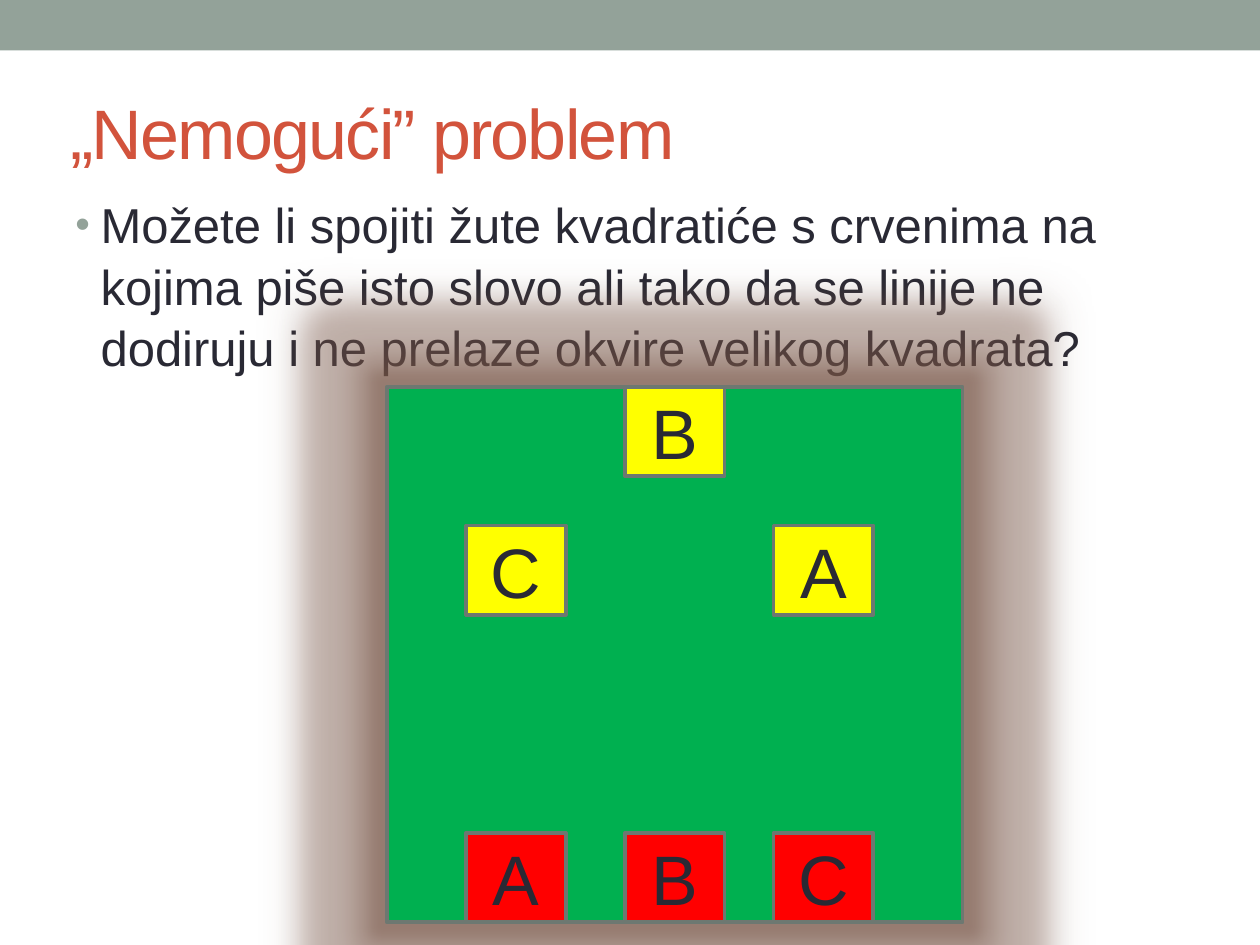
from dataclasses import dataclass

from lxml import etree
from pptx import Presentation
from pptx.dml.color import RGBColor
from pptx.enum.shapes import MSO_SHAPE
from pptx.enum.text import MSO_ANCHOR, PP_ALIGN
from pptx.oxml import parse_xml
from pptx.oxml.ns import nsdecls, qn
from pptx.util import Inches, Pt

RECTANGLE = MSO_SHAPE.RECTANGLE
MIDDLE = MSO_ANCHOR.MIDDLE
CENTER = PP_ALIGN.CENTER


@dataclass(frozen=True)
class Theme:
    font: str = "Arial"
    band: str = "93A299"
    title: str = "D2533C"
    ink: str = "292934"
    board: str = "00B050"
    border: str = "6D7871"
    red: str = "FF0000"
    yellow: str = "FFFF00"
    glow: str = "765344"
    large: int = 40
    body: int = 28
    border_width: float = 2.08


theme = Theme()


def add_box(left, top, width, height, fill, border=None):
    box = slide.shapes.add_shape(
        RECTANGLE, Inches(left), Inches(top), Inches(width), Inches(height))
    box.shadow.inherit = False
    box.fill.solid()
    box.fill.fore_color.rgb = RGBColor.from_string(fill)
    if border:
        box.line.color.rgb = RGBColor.from_string(border)
        box.line.width = Pt(theme.border_width)
    else:
        box.line.fill.background()
    return box


def write(shape, text, size, color):
    shape.text_frame.word_wrap = True
    paragraph = shape.text_frame.paragraphs[0]
    paragraph.text = text
    font = paragraph.runs[0].font
    font.name = theme.font
    font.size = Pt(size)
    font.color.rgb = RGBColor.from_string(color)
    return paragraph


deck = Presentation()
deck.slide_width = Inches(10)
deck.slide_height = Inches(7.5)
slide = deck.slides.add_slide(deck.slide_layouts[6])

add_box(0, 0, 10, 0.4, theme.band)

title = slide.shapes.add_textbox(Inches(0.46), Inches(0.52), Inches(9), Inches(1.04))
title.text_frame.vertical_anchor = MIDDLE
heading = write(title, "„Nemogući” problem", theme.large, theme.title)
heading.runs[0].font._element.set("spc", "-100")

question = slide.shapes.add_textbox(Inches(0.5), Inches(1.47), Inches(9), Inches(5.62))
task = write(
    question,
    "Možete li spojiti žute kvadratiće s crvenima na kojima piše isto slovo "
    "ali tako da se linije ne dodiruju i ne prelaze okvire velikog kvadrata?",
    theme.body, theme.ink)
task.line_spacing = 1.05
bullet = task._p.get_or_add_pPr()
bullet.set("marL", str(Inches(0.2)))
bullet.set("indent", str(-Inches(0.2)))
bullet_color = etree.SubElement(bullet, qn("a:buClr"))
etree.SubElement(bullet_color, qn("a:srgbClr"), val=theme.band)
etree.SubElement(bullet, qn("a:buSzPct"), val="85000")
etree.SubElement(bullet, qn("a:buFont"), typeface=theme.font)
etree.SubElement(bullet, qn("a:buChar"), char="•")

board_left, board_top, board_width, board_height = 3.07, 3.07, 4.57, 4.25
board = add_box(board_left, board_top, board_width, board_height, theme.board, theme.border)
halo = parse_xml(
    f'<a:effectLst {nsdecls("a")}>'
    f'<a:glow rad="{Inches(0.45)}"><a:srgbClr val="{theme.glow}">'
    '<a:alpha val="40000"/></a:srgbClr></a:glow>'
    f'<a:outerShdw blurRad="{Inches(0.1)}" sx="105000" sy="105000" algn="ctr">'
    f'<a:srgbClr val="{theme.glow}"><a:alpha val="32000"/></a:srgbClr></a:outerShdw>'
    '</a:effectLst>')
plain_effects = board._element.spPr.find(qn("a:effectLst"))
board._element.spPr.replace(plain_effects, halo)

tile_width, tile_height = 0.79, 0.71
left_column, middle_column, right_column = 3.7, 4.96, 6.14
middle_row = 4.17
bottom_row = board_top + board_height - tile_height
tiles = [
    ("A", left_column, bottom_row, theme.red),
    ("B", middle_column, bottom_row, theme.red),
    ("C", right_column, bottom_row, theme.red),
    ("C", left_column, middle_row, theme.yellow),
    ("A", right_column, middle_row, theme.yellow),
    ("B", middle_column, board_top, theme.yellow),
]
for letter, left, top, color in tiles:
    tile = add_box(left, top, tile_width, tile_height, color, theme.border)
    tile.text_frame.vertical_anchor = MIDDLE
    write(tile, letter, theme.large, theme.ink).alignment = CENTER

deck.save("out.pptx")
